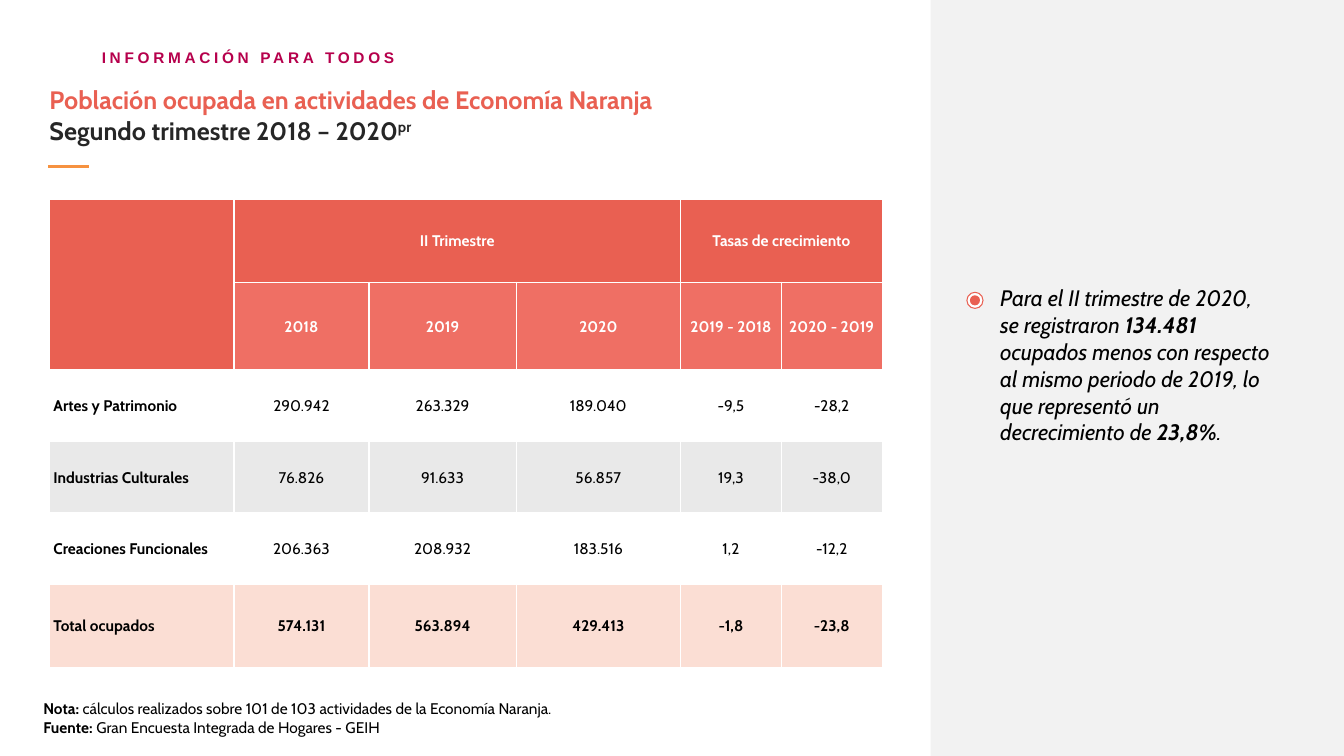
from dataclasses import dataclass

from lxml import etree
from pptx import Presentation
from pptx.dml.color import RGBColor
from pptx.enum.shapes import MSO_CONNECTOR, MSO_SHAPE
from pptx.enum.text import MSO_ANCHOR, MSO_AUTO_SIZE, PP_ALIGN
from pptx.oxml.ns import qn
from pptx.util import Pt

PX = 9144  # 100 px to the inch
RECTANGLE, OVAL = MSO_SHAPE.RECTANGLE, MSO_SHAPE.OVAL
STRAIGHT = MSO_CONNECTOR.STRAIGHT
TOP, MIDDLE = MSO_ANCHOR.TOP, MSO_ANCHOR.MIDDLE
LEFT, CENTER = PP_ALIGN.LEFT, PP_ALIGN.CENTER
NO_AUTOFIT = MSO_AUTO_SIZE.NONE


@dataclass(frozen=True)
class Theme:
    font: str = "Cabin"
    motto_font: str = "Arial"
    motto: str = "B6004C"
    coral: str = "E96052"
    light_coral: str = "EF6F64"
    peach: str = "FBDED4"
    orange: str = "F69240"
    panel: str = "F2F2F2"
    band: str = "E9E9E9"
    white: str = "FFFFFF"
    dark: str = "262626"
    black: str = "000000"
    title_size: int = 18
    takeaway_size: int = 16
    small_size: int = 11


THEME = Theme()
TEXT_INSETS = (13, 7, 13, 7)
CELL_INSETS = (4, 1, 4, 0)
COLUMNS = (183, 134, 146, 163, 100, 100)
ROWS = (82, 87, 71, 71, 71, 82)
PERIODS = ("2018", "2019", "2020", "2019 - 2018", "2020 - 2019")
ACTIVITIES = (
    ("Artes y Patrimonio", "290.942", "263.329", "189.040", "-9,5", "-28,2"),
    ("Industrias Culturales", "76.826", "91.633", "56.857", "19,3", "-38,0"),
    ("Creaciones Funcionales", "206.363", "208.932", "183.516", "1,2", "-12,2"),
    ("Total ocupados", "574.131", "563.894", "429.413", "-1,8", "-23,8"),
)


def px(*lengths):
    return [length * PX for length in lengths]


def style_run(run, size, color=THEME.black, bold=False, italic=False, name=THEME.font):
    font = run.font
    font.name, font.size = name, Pt(size)
    font.bold, font.italic = bold, italic
    font.color.rgb = RGBColor.from_string(color)


def write_paragraph(paragraph, parts, size, indent=0, **style):
    """Each part is a text and the style that sets it apart."""
    properties = paragraph._p.get_or_add_pPr()
    properties.set("marL", str(indent * PX))
    properties.set("indent", "0")
    etree.SubElement(properties, qn("a:buNone"))
    paragraph.alignment = LEFT
    paragraph.space_before = Pt(0)
    for text, special in parts:
        run = paragraph.add_run()
        run.text = text
        style_run(run, size, **{**style, **special})


def prepare_frame(shape, box, insets=TEXT_INSETS):
    shape.left, shape.top, shape.width, shape.height = px(*box)
    frame = shape.text_frame
    frame.word_wrap = True
    frame.auto_size = NO_AUTOFIT
    frame.vertical_anchor = TOP
    (frame.margin_left, frame.margin_top,
     frame.margin_right, frame.margin_bottom) = px(*insets)
    return frame


def add_block(shapes, kind, box, fill, outline=None):
    block = shapes.add_shape(kind, *px(*box))
    block.shadow.inherit = False
    block.fill.solid()
    block.fill.fore_color.rgb = RGBColor.from_string(fill)
    if outline:
        block.line.color.rgb = RGBColor.from_string(outline)
        block.line.width = Pt(0.75)
    else:
        block.line.fill.background()
    return block


def add_rule(slide, start, end, color):
    rule = slide.shapes.add_connector(STRAIGHT, *px(*start, *end))
    rule.line.color.rgb = RGBColor.from_string(color)
    rule.line.width = Pt(2.25)
    etree.SubElement(rule._element.spPr, qn("a:effectLst"))


def add_motto(slide):
    box = (99, 40, 410, 25)
    motto = slide.shapes.add_textbox(*px(*box))
    frame = prepare_frame(motto, box, (0, 2, 0, 0))
    frame.text = "INFORMACIÓN PARA TODOS"
    paragraph = frame.paragraphs[0]
    paragraph._p.get_or_add_pPr().set("marL", str(2 * PX))
    paragraph.line_spacing = 1.3
    run = paragraph.runs[0]
    style_run(run, THEME.small_size, THEME.motto, bold=True, name=THEME.motto_font)
    run._r.get_or_add_rPr().set("spc", "260")


def fill_title(title):
    frame = prepare_frame(title, (34, 77, 1048, 74))
    lines = (
        [("Población ocupada en actividades de Economía Naranja",
          {"color": THEME.coral})],
        [("Segundo trimestre 2018 – 2020", {}), ("pr", {})],
    )
    for index, parts in enumerate(lines):
        paragraph = frame.add_paragraph() if index else frame.paragraphs[0]
        write_paragraph(paragraph, parts, THEME.title_size, indent=2,
                        color=THEME.dark, bold=True)
    superscript = frame.paragraphs[1].runs[1]
    superscript._r.get_or_add_rPr().set("baseline", "30000")


def fill_takeaway(body):
    frame = prepare_frame(body, (979, 275, 297, 175))
    strong = {"bold": True}
    write_paragraph(frame.paragraphs[0], [
        ("Para el II trimestre de 2020, se registraron ", {}),
        ("134.481", strong),
        (" ocupados menos con respecto al mismo periodo de 2019, lo que "
         "representó un decrecimiento de ", {}),
        ("23,8%", strong),
        (".", {}),
    ], THEME.takeaway_size, italic=True)


def add_sources(slide):
    box = (30, 687, 667, 50)
    frame = prepare_frame(slide.shapes.add_textbox(*px(*box)), box)
    notes = (
        ("Nota: ", "cálculos realizados sobre 101 de 103 actividades de la "
                   "Economía Naranja."),
        ("Fuente: ", "Gran Encuesta Integrada de Hogares - GEIH"),
    )
    for index, (label, note) in enumerate(notes):
        paragraph = frame.add_paragraph() if index else frame.paragraphs[0]
        write_paragraph(paragraph, [(label, {"bold": True}), (note, {})],
                        THEME.small_size)


def format_cell(cell, text, fill, align=CENTER, **style):
    (cell.margin_left, cell.margin_top,
     cell.margin_right, cell.margin_bottom) = px(*CELL_INSETS)
    cell.vertical_anchor = MIDDLE
    properties = cell._tc.get_or_add_tcPr()
    for side in ("a:lnL", "a:lnR", "a:lnT", "a:lnB"):
        border = etree.SubElement(properties, qn(side), w=str(Pt(1)))
        solid = etree.SubElement(border, qn("a:solidFill"))
        etree.SubElement(solid, qn("a:srgbClr"), val=THEME.white)
    cell.fill.solid()
    cell.fill.fore_color.rgb = RGBColor.from_string(fill)
    cell.text = text
    paragraph = cell.text_frame.paragraphs[0]
    paragraph.alignment = align
    for run in paragraph.runs:
        style_run(run, THEME.small_size, **style)


def add_employment_table(slide):
    table = slide.shapes.add_table(
        len(ROWS), len(COLUMNS), *px(49, 198, sum(COLUMNS), sum(ROWS))).table
    table.first_row = table.horz_banding = False
    for column, width in zip(table.columns, COLUMNS):
        column.width = width * PX
    for row, height in zip(table.rows, ROWS):
        row.height = height * PX

    # Two header rows
    headings = (("", "II Trimestre", "", "", "Tasas de crecimiento", ""),
                ("", *PERIODS))
    for r, texts in enumerate(headings):
        for c, text in enumerate(texts):
            fill = THEME.light_coral if r and c else THEME.coral
            format_cell(table.cell(r, c), text, fill, color=THEME.white, bold=True)
    for first, last in (((0, 0), (1, 0)), ((0, 1), (0, 3)), ((0, 4), (0, 5))):
        table.cell(*first).merge(table.cell(*last))

    # Activities and their total
    fills = (THEME.white, THEME.band, THEME.white, THEME.peach)
    for r, (values, fill) in enumerate(zip(ACTIVITIES, fills), len(headings)):
        for c, value in enumerate(values):
            format_cell(table.cell(r, c), value, fill, CENTER if c else LEFT,
                        bold=c == 0 or fill == THEME.peach)


def main():
    deck = Presentation()
    deck.slide_width, deck.slide_height = px(1333, 750)
    slide = deck.slides.add_slide(deck.slide_layouts[1])
    title, body = slide.placeholders

    # Side panel, behind the placeholders
    panel = add_block(slide.shapes, RECTANGLE, (923, 0, 410, 750), THEME.panel)
    title.element.addprevious(panel.element)

    # Heading
    add_motto(slide)
    fill_title(title)
    add_rule(slide, (48, 165), (88, 165), THEME.orange)

    # Takeaway with its round marker
    marker = slide.shapes.add_group_shape().shapes
    add_block(marker, OVAL, (959, 290, 16, 16), THEME.white, THEME.coral)
    add_block(marker, OVAL, (962, 293, 10, 10), THEME.coral)
    fill_takeaway(body)

    # Figures and sources
    add_employment_table(slide)
    add_sources(slide)
    deck.save("out.pptx")


if __name__ == "__main__":
    main()
